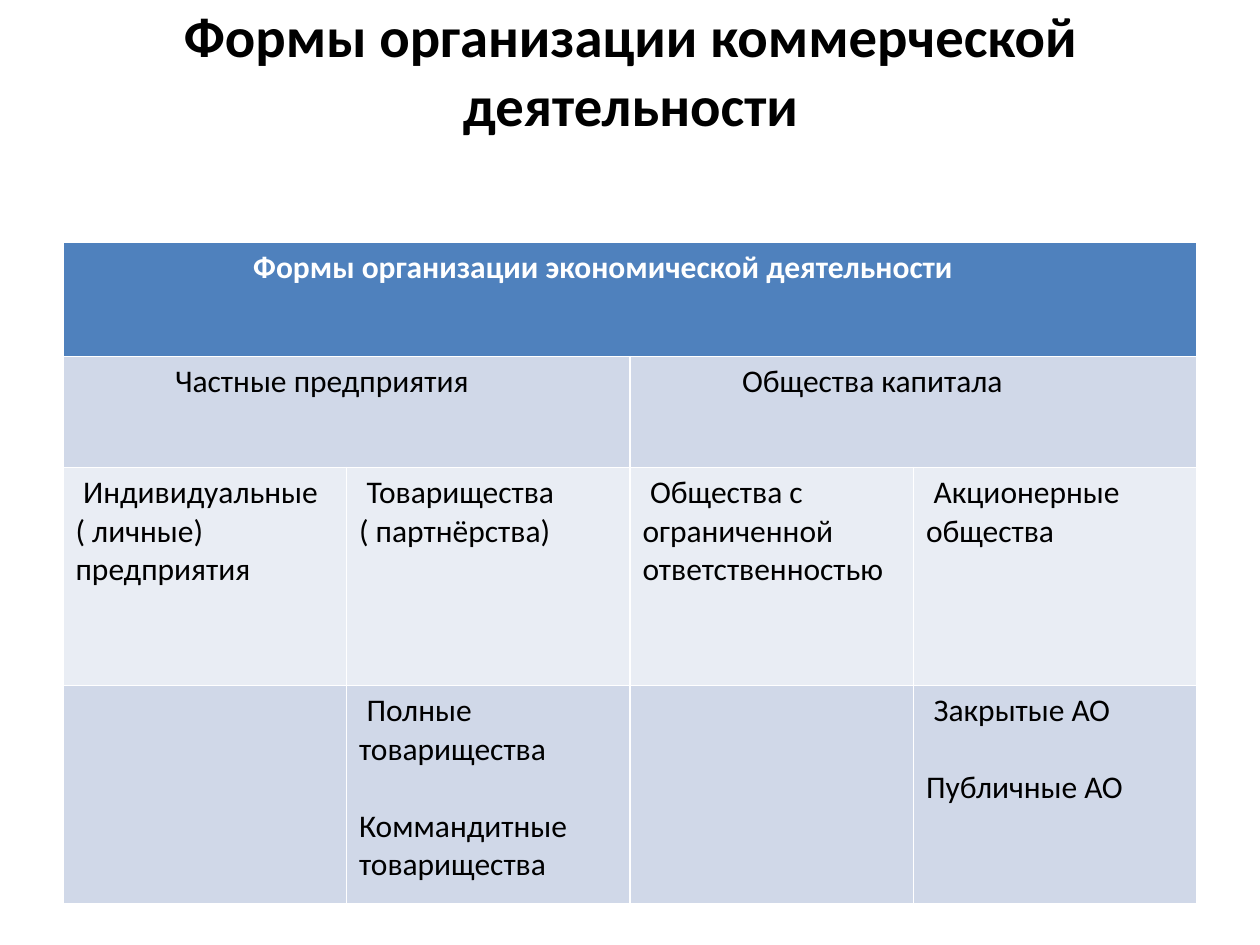
from pptx import Presentation
from pptx.dml.color import RGBColor
from pptx.enum.text import MSO_ANCHOR, PP_ALIGN
from pptx.util import Inches, Pt

FONT = "Calibri"
BLACK, WHITE = "000000", "FFFFFF"
HEADER_FILL, DARK_BAND, LIGHT_BAND = "4F81BD", "D0D8E8", "E9EDF4"
COLUMNS = 4
ROW_HEIGHTS = (0.91, 0.88, 1.73, 1.73)
ROW_FILLS = (HEADER_FILL, DARK_BAND, LIGHT_BAND, DARK_BAND)
ROW_INDENTS = (1.41, 0.79, 0.06, 0.06)

# Each cell is (columns spanned, paragraphs).
ROWS = (
    ((4, ["Формы организации экономической деятельности"]),),
    ((2, ["Частные предприятия"]), (2, ["Общества капитала"])),
    (
        (1, ["Индивидуальные ( личные) предприятия"]),
        (1, ["Товарищества ( партнёрства)"]),
        (1, ["Общества с ограниченной ответственностью"]),
        (1, ["Акционерные общества"]),
    ),
    (
        (1, []),
        (1, ["Полные товарищества", "Коммандитные товарищества"]),
        (1, []),
        (1, ["Закрытые АО", "Публичные АО"]),
    ),
)


def color(value):
    return RGBColor.from_string(value)


def format_runs(paragraph, size, font_color, bold):
    for run in paragraph.runs:
        run.font.name = FONT
        run.font.size = Pt(size)
        run.font.bold = bold
        run.font.color.rgb = color(font_color)


def place_title(slide, left, top, width, height):
    title = slide.shapes.title
    title.left, title.top, title.width, title.height = left, top, width, height
    frame = title.text_frame
    frame.text = "Формы организации коммерческой деятельности"
    frame.word_wrap = True
    frame.vertical_anchor = MSO_ANCHOR.MIDDLE
    paragraph = frame.paragraphs[0]
    paragraph.alignment = PP_ALIGN.CENTER
    format_runs(paragraph, 32.4, BLACK, True)


def fill_cell(cell, paragraphs, indent, font_color, bold):
    """Write the paragraphs, indenting the first line of the first one."""
    frame = cell.text_frame
    frame.text = "\n".join(paragraphs)
    for index, paragraph in enumerate(frame.paragraphs):
        if index == 0:
            paragraph._p.get_or_add_pPr().set("indent", str(Inches(indent)))
        else:
            paragraph.space_before = Pt(22)
        format_runs(paragraph, 18, font_color, bold)


def place_table(slide, left, top, width):
    height = Inches(sum(ROW_HEIGHTS))
    table = slide.shapes.add_table(
        len(ROWS), COLUMNS, left, top, width, height
    ).table
    for row, row_height, fill in zip(table.rows, ROW_HEIGHTS, ROW_FILLS):
        row.height = Inches(row_height)
        for cell in row.cells:
            cell.fill.solid()
            cell.fill.fore_color.rgb = color(fill)

    for row_index, (entries, indent) in enumerate(zip(ROWS, ROW_INDENTS)):
        is_header = row_index == 0
        column = 0
        for span, paragraphs in entries:
            cell = table.cell(row_index, column)
            if span > 1:
                cell.merge(table.cell(row_index, column + span - 1))
            fill_cell(cell, paragraphs, indent,
                      WHITE if is_header else BLACK, is_header)
            column += span


def main():
    presentation = Presentation()
    presentation.slide_width = Inches(10)
    presentation.slide_height = Inches(7.5)
    slide = presentation.slides.add_slide(presentation.slide_layouts[5])
    place_title(slide, Inches(0.17), 0, Inches(9.67), Inches(1.1))
    place_table(slide, Inches(0.5), Inches(1.92), Inches(9))
    presentation.save("out.pptx")


if __name__ == "__main__":
    main()
